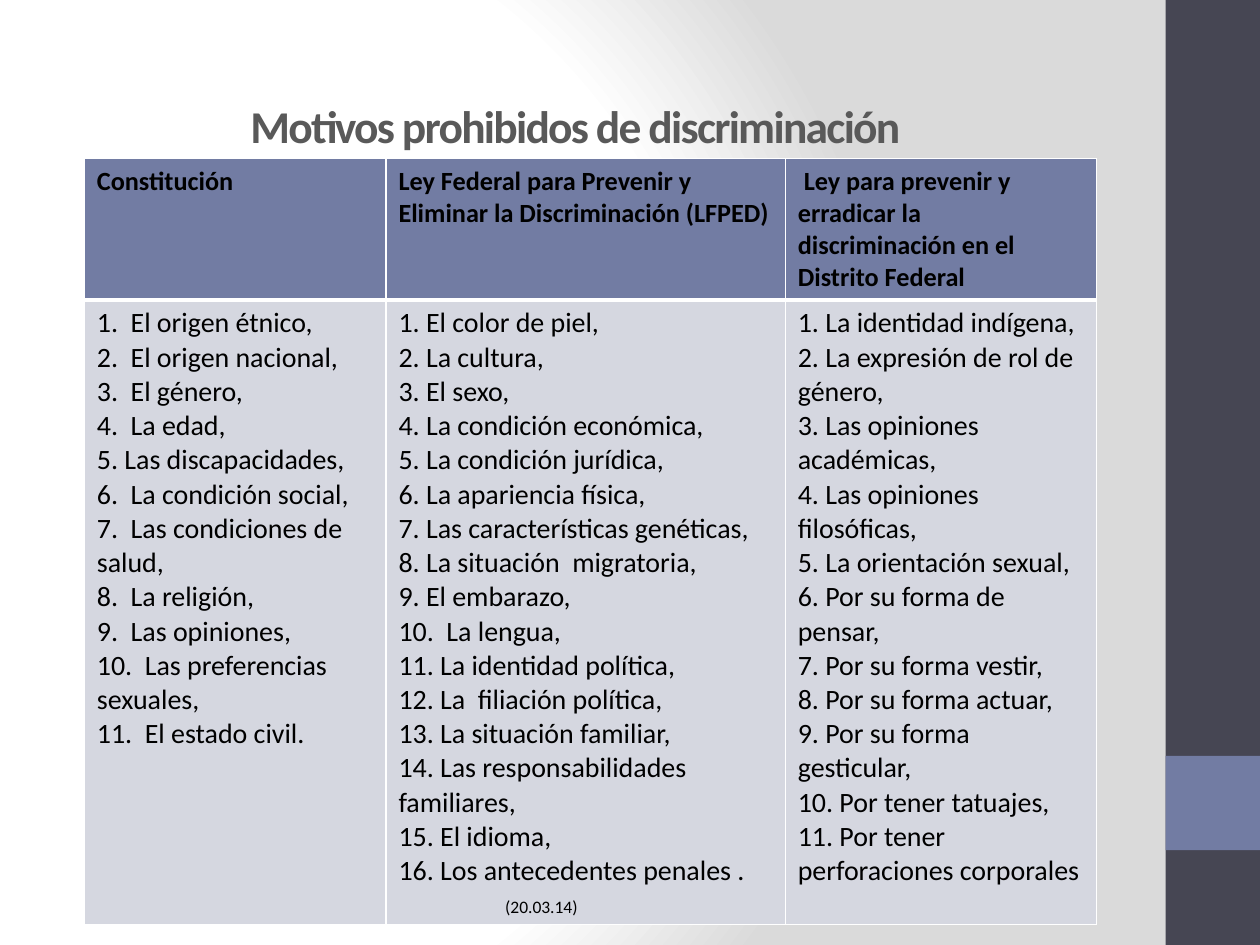
from lxml.etree import SubElement
from pptx import Presentation
from pptx.dml.color import RGBColor
from pptx.enum.shapes import MSO_SHAPE
from pptx.enum.text import MSO_ANCHOR, MSO_AUTO_SIZE, PP_ALIGN
from pptx.oxml import parse_xml
from pptx.oxml.ns import nsdecls, qn
from pptx.util import Cm, Pt

BLACK = RGBColor(0x00, 0x00, 0x00)
WHITE = RGBColor(0xFF, 0xFF, 0xFF)
GRAY = RGBColor(0x59, 0x59, 0x59)
LIGHT_GRAY = RGBColor(0xDA, 0xDA, 0xDA)
SLATE = RGBColor(0x46, 0x46, 0x53)
PERIWINKLE = RGBColor(0x72, 0x7C, 0xA3)
PALE = RGBColor(0xD5, 0xD7, 0xE0)

LAWS = [
    "Constitución",
    "Ley Federal para Prevenir y Eliminar la Discriminación (LFPED)",
    " Ley para prevenir y erradicar la discriminación en el Distrito Federal",
]
GROUNDS = [
    [
        "1.  El origen étnico,",
        "2.  El origen nacional,",
        "3.  El género,",
        "4.  La edad,",
        "5. Las discapacidades,",
        "6.  La condición social,",
        "7.  Las condiciones de salud,",
        "8.  La religión,",
        "9.  Las opiniones,",
        "10.  Las preferencias sexuales,",
        "11.  El estado civil.",
    ],
    [
        "1. El color de piel,",
        "2. La cultura,",
        "3. El sexo,",
        "4. La condición económica,",
        "5. La condición jurídica,",
        "6. La apariencia física,",
        "7. Las características genéticas,",
        "8. La situación  migratoria,",
        "9. El embarazo,",
        "10.  La lengua,",
        "11. La identidad política,",
        "12. La  filiación política,",
        "13. La situación familiar,",
        "14. Las responsabilidades",
        "familiares,",
        "15. El idioma,",
        "16. Los antecedentes penales .",
    ],
    [
        "1. La identidad indígena,",
        "2. La expresión de rol de género,",
        "3. Las opiniones académicas,",
        "4. Las opiniones filosóficas,",
        "5. La orientación sexual,",
        "6. Por su forma de pensar,",
        "7. Por su forma vestir,",
        "8. Por su forma actuar,",
        "9. Por su forma  gesticular,",
        "10. Por tener tatuajes,",
        "11. Por tener perforaciones corporales",
    ],
]
REFORM_DATE = "(20.03.14)"


def write(frame, text, size=16, color=BLACK, bold=False, align=PP_ALIGN.LEFT,
          indent=0, before=0, tracking=0):
    paragraph = frame.paragraphs[0]
    if paragraph.runs:
        paragraph = frame.add_paragraph()
    paragraph.alignment = align
    if indent:
        paragraph._p.get_or_add_pPr().set("marL", str(Cm(indent)))
    if before:
        paragraph.space_before = Pt(before)
    run = paragraph.add_run()
    run.text = text
    run.font.name = "Calibri"
    run.font.size = Pt(size)
    run.font.bold = bold
    run.font.color.rgb = color
    if tracking:
        run._r.get_or_add_rPr().set("spc", str(tracking * 100))


class GroundsSlide:
    """Holds the style and the current slide, and adds each kind of element."""

    def __init__(self, deck):
        self.slide = deck.slides.add_slide(deck.slide_layouts[5])

    def background(self):
        fill = self.slide.background.fill
        fill.gradient()
        gradient = self.slide._element.find(".//" + qn("a:gradFill"))
        stops = "".join(
            f'<a:gs pos="{percent * 1000}"><a:srgbClr val="{color}"/></a:gs>'
            for percent, color in [(0, WHITE), (75, WHITE), (100, LIGHT_GRAY)]
        )
        radial = parse_xml(
            f'<a:gradFill {nsdecls("a")} rotWithShape="1"><a:gsLst>{stops}</a:gsLst>'
            '<a:path path="circle"><a:fillToRect l="20000" t="50000" r="100000" b="50000"/>'
            "</a:path></a:gradFill>"
        )
        gradient.getparent().replace(gradient, radial)

    def band(self, top, height, color):
        band = self.slide.shapes.add_shape(
            MSO_SHAPE.RECTANGLE, Cm(23.5), Cm(top), Cm(1.9), Cm(height))
        band.shadow.inherit = False
        band.fill.solid()
        band.fill.fore_color.rgb = color
        band.line.fill.background()

    def title(self, text):
        title = self.slide.shapes.title
        title.left, title.top = Cm(3.91), Cm(1.93)
        title.width, title.height = Cm(15.39), Cm(1.19)
        frame = title.text_frame
        frame.auto_size = MSO_AUTO_SIZE.NONE
        frame.vertical_anchor = MSO_ANCHOR.MIDDLE
        write(frame, text, size=26, color=GRAY, bold=True,
              align=PP_ALIGN.CENTER, tracking=-1)

    def cell(self, cell, color, top, bottom):
        properties = cell._tc.get_or_add_tcPr()
        for side, width in [("L", 1), ("R", 1), ("T", top), ("B", bottom)]:
            line = SubElement(properties, qn(f"a:ln{side}"), w=str(Pt(width)))
            solid = SubElement(line, qn("a:solidFill"))
            SubElement(solid, qn("a:srgbClr"), val=str(WHITE))
        cell.fill.solid()
        cell.fill.fore_color.rgb = color

    def table(self, headings, lists):
        widths, heights = [6.08, 8.05, 6.27], [2.75, 12.57]
        table = self.slide.shapes.add_table(
            2, 3, Cm(1.7), Cm(3.2), Cm(sum(widths)), Cm(sum(heights))).table
        for row, height in zip(table.rows, heights):
            row.height = Cm(height)
        for index, (heading, items) in enumerate(zip(headings, lists)):
            table.columns[index].width = Cm(widths[index])
            law, grounds = table.cell(0, index), table.cell(1, index)
            self.cell(law, PERIWINKLE, top=1, bottom=3)
            self.cell(grounds, PALE, top=3, bottom=1)
            write(law.text_frame, heading, size=15, bold=True)
            for item in items:
                write(grounds.text_frame, item)
        return table


def main():
    deck = Presentation()
    deck.slide_width, deck.slide_height = Cm(25.4), Cm(19.05)
    page = GroundsSlide(deck)
    page.background()
    page.band(0, 19.05, SLATE)
    page.band(15.24, 1.9, PERIWINKLE)
    page.title("Motivos prohibidos de discriminación")
    table = page.table(LAWS, GROUNDS)
    write(table.cell(1, 1).text_frame, REFORM_DATE, size=10, indent=2.15, before=5)
    deck.save("out.pptx")


if __name__ == "__main__":
    main()
